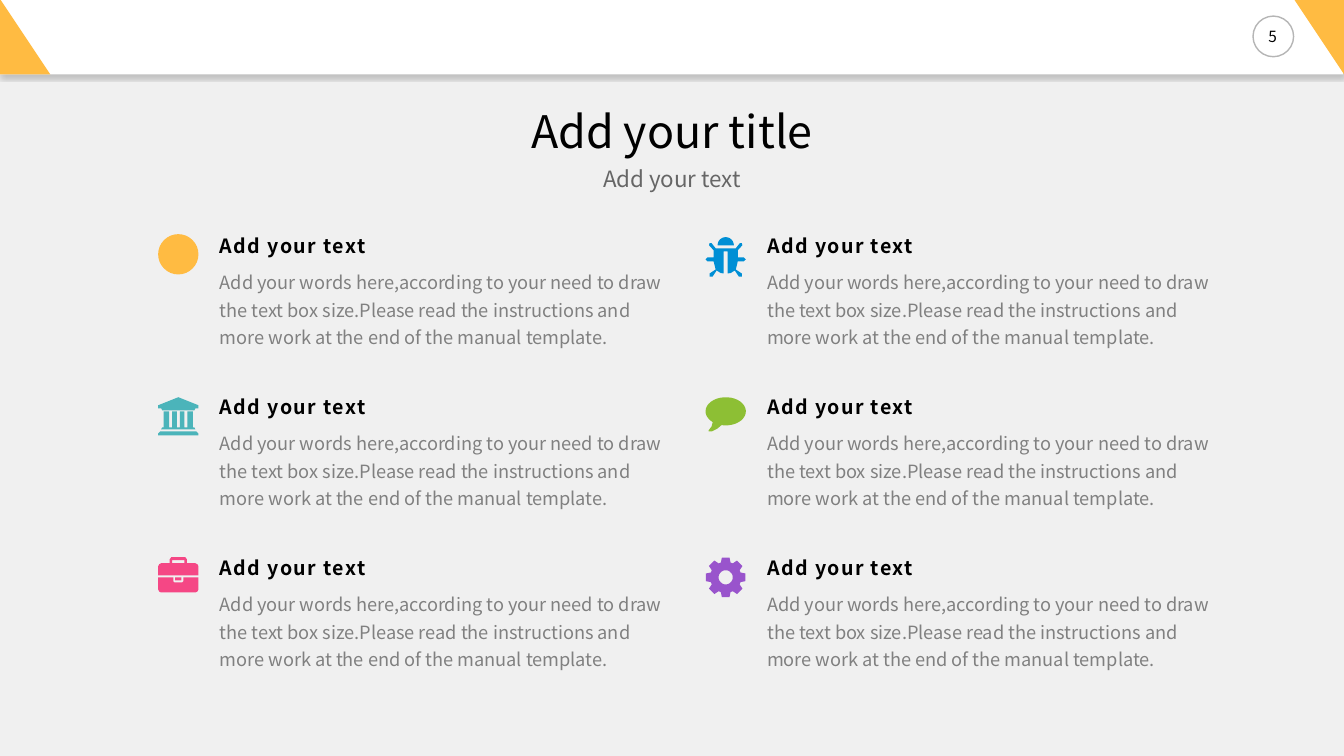
from itertools import product
from math import cos, radians, sin

from lxml.etree import SubElement
from pptx import Presentation
from pptx.dml.color import RGBColor
from pptx.enum.shapes import MSO_SHAPE as Preset
from pptx.enum.text import MSO_ANCHOR as Anchor, PP_ALIGN as Align
from pptx.oxml import parse_xml
from pptx.oxml.ns import nsdecls, qn
from pptx.util import Pt

FONT = "Noto Sans CJK JP"
BACKGROUND = RGBColor(0xF0, 0xF0, 0xF0)
WHITE = RGBColor(0xFF, 0xFF, 0xFF)
BLACK = RGBColor(0x00, 0x00, 0x00)
RING = RGBColor(0x0D, 0x0D, 0x0D)
DARK_GRAY = RGBColor(0x66, 0x66, 0x66)
GRAY = RGBColor(0x80, 0x80, 0x80)
YELLOW = RGBColor(0xFF, 0xBB, 0x42)
BLUE = RGBColor(0x00, 0x8F, 0xD5)
TEAL = RGBColor(0x4B, 0xB4, 0xBA)
GREEN = RGBColor(0x8D, 0xBF, 0x34)
PINK = RGBColor(0xF5, 0x47, 0x85)
PURPLE = RGBColor(0x99, 0x54, 0xCC)


def arc(cx, cy, rx, ry, start, end):
    """Points along an ellipse, angles in degrees, clockwise from the right."""
    steps = 32
    angles = [radians(start + (end - start) * i / steps) for i in range(steps + 1)]
    return [(cx + rx * cos(a), cy + ry * sin(a)) for a in angles]


def symmetric(half):
    """Close a right half with its mirror image about x = 20."""
    return half + [(40 - x, y) for x, y in reversed(half)]


prs = Presentation()
prs.slide_width, prs.slide_height = Pt(960), Pt(540)
slide = prs.slides.add_slide(prs.slide_layouts[6])
slide.background.fill.solid()
slide.background.fill.fore_color.rgb = BACKGROUND

# Header band, page number ring and corner triangles
header = []
for preset, left, top, width, height, color in [
    (Preset.RECTANGLE, -0.5, -0.8, 960, 54, WHITE),
    (Preset.OVAL, 895, 11.5, 29, 29, WHITE),
    (Preset.RIGHT_TRIANGLE, 0, -0.8, 36, 54, YELLOW),
    (Preset.RIGHT_TRIANGLE, 924, -1, 36, 54, YELLOW),
]:
    part = slide.shapes.add_shape(preset, Pt(left), Pt(top), Pt(width), Pt(height))
    part.shadow.inherit = False
    part.fill.solid()
    part.fill.fore_color.rgb = color
    part.line.fill.background()
    header.append(part)
band, ring, left_corner, right_corner = header
right_corner.rotation = 180

ring.line.color.rgb = RING
ring.line.width = Pt(1)
ring_color = ring.line._ln.find(".//" + qn("a:srgbClr"))
SubElement(ring_color, qn("a:alpha"), val="30000")

band_effects = band._element.spPr.find(qn("a:effectLst"))
band_effects.append(parse_xml(
    f'<a:outerShdw {nsdecls("a")} blurRad="{Pt(3)}" dist="{Pt(2)}" dir="5400000" '
    'algn="t" rotWithShape="0"><a:srgbClr val="000000"><a:alpha val="20000"/>'
    '</a:srgbClr></a:outerShdw>'))

# Texts: font attributes, colour and paragraph attributes of each kind
NUMBER = ({"size": Pt(11)}, BLACK, {"alignment": Align.CENTER})
TITLE = ({"size": Pt(32)}, BLACK, {"alignment": Align.CENTER, "line_spacing": 0.9})
SUBTITLE = ({"size": Pt(16)}, DARK_GRAY, {"alignment": Align.CENTER, "line_spacing": 0.9})
HEADING = ({"size": Pt(14), "bold": True}, BLACK,
           {"line_spacing": 0.9, "space_before": Pt(10)})
BODY = ({"size": Pt(13)}, GRAY, {"line_spacing": 1.25, "space_before": Pt(10)})
DESCRIPTION = ("Add your words here,according to your need to draw the text box size."
               "Please read the instructions and more work at the end of the manual template.")

COLUMNS = [113, 504]
ROWS = [168, 283, 398]
texts = [
    (895, 11.5, 28, 29, "5", NUMBER),
    (36, 78.5, 888, 39, "Add your title", TITLE),
    (36, 120, 888, 19.5, "Add your text", SUBTITLE),
]
for left, top in product(COLUMNS, ROWS):
    texts.append((left + 44, top + 1.2, 325, 20, "Add your text", HEADING))
    texts.append((left + 44, top + 22.2, 325, 86, DESCRIPTION, BODY))

for left, top, width, height, words, style in texts:
    font_format, color, paragraph_format = style
    frame = slide.shapes.add_textbox(Pt(left), Pt(top), Pt(width), Pt(height)).text_frame
    frame.word_wrap = True
    if style is NUMBER:
        frame.vertical_anchor = Anchor.MIDDLE
    else:
        for side in ("left", "top", "right", "bottom"):
            setattr(frame, f"margin_{side}", 0)
    paragraph = frame.paragraphs[0]
    for key, value in paragraph_format.items():
        setattr(paragraph, key, value)
    run = paragraph.add_run()
    run.text = words
    run.font.name = FONT
    run.font.color.rgb = color
    for key, value in font_format.items():
        setattr(run.font, key, value)
    if style is HEADING:
        run._r.get_or_add_rPr().set("spc", "100")

# Icons: outlines on a grid 40 units wide, inner outlines cut holes
disc = [arc(20, 19, 20, 20, 0, 360)]
bank = [
    symmetric([(20, 1), (40, 9), (40, 12), (37, 12), (36, 14)]),
    symmetric([(21.5, 31), (21.5, 15), (26, 15), (26, 31), (29, 31), (29, 15),
               (34.5, 15), (34.5, 31), (36, 31), (37, 33)]),
    symmetric([(38, 35), (40, 37), (40, 39)]),
]
briefcase = [
    symmetric([(27, 0), (28.5, 2), (28.5, 6), (37, 6), (39, 7), (40, 9), (40, 18)]),
    symmetric([(26, 3), (26, 6)]),
    symmetric([(24, 25), (25, 24), (25, 20), (40, 20), (40, 32), (39, 34), (37, 35)]),
    symmetric([(23, 20), (23, 23)]),
]
bug = [
    arc(20, 10, 8, 8, 180, 360),
    symmetric([(30, 13), (34, 8), (36, 8), (36.5, 10), (32, 15), (32, 22), (38, 22),
               (40, 24), (38, 26), (32, 26), (30, 34), (36, 38), (36, 41), (33, 41),
               (29, 35), (25, 37.5), (22, 38), (22, 16)]),
]
bubble = [arc(20, 15, 20, 14, 130, 462) + [(12, 32), (6, 35), (3, 35), (3, 34), (6, 30)]]
gear_rim = []
for tooth in range(0, 360, 45):
    for offset, radius in [(-18, 15.5), (-11, 20), (11, 20), (18, 15.5)]:
        angle = radians(tooth + offset)
        gear_rim.append((20 + radius * cos(angle), 20 + radius * sin(angle)))
gear = [gear_rim, arc(20, 20, 7, 7, 0, 360)]

icons = [(disc, YELLOW), (bank, TEAL), (briefcase, PINK),
         (bug, BLUE), (bubble, GREEN), (gear, PURPLE)]
FINE = 10  # freeform points are whole numbers, so each grid unit is split
for (left, top), (outlines, color) in zip(product(COLUMNS, ROWS), icons):
    builder = None
    for outline in outlines:
        start, *rest = [(x * FINE, y * FINE) for x, y in outline]
        if builder is None:
            builder = slide.shapes.build_freeform(*start, scale=Pt(0.72) / FINE)
        else:
            builder.move_to(*start)
        builder.add_line_segments(rest, close=True)
    icon = builder.convert_to_shape(Pt(left), Pt(top))
    icon.shadow.inherit = False
    icon.fill.solid()
    icon.fill.fore_color.rgb = color
    icon.line.fill.background()

prs.save("out.pptx")
